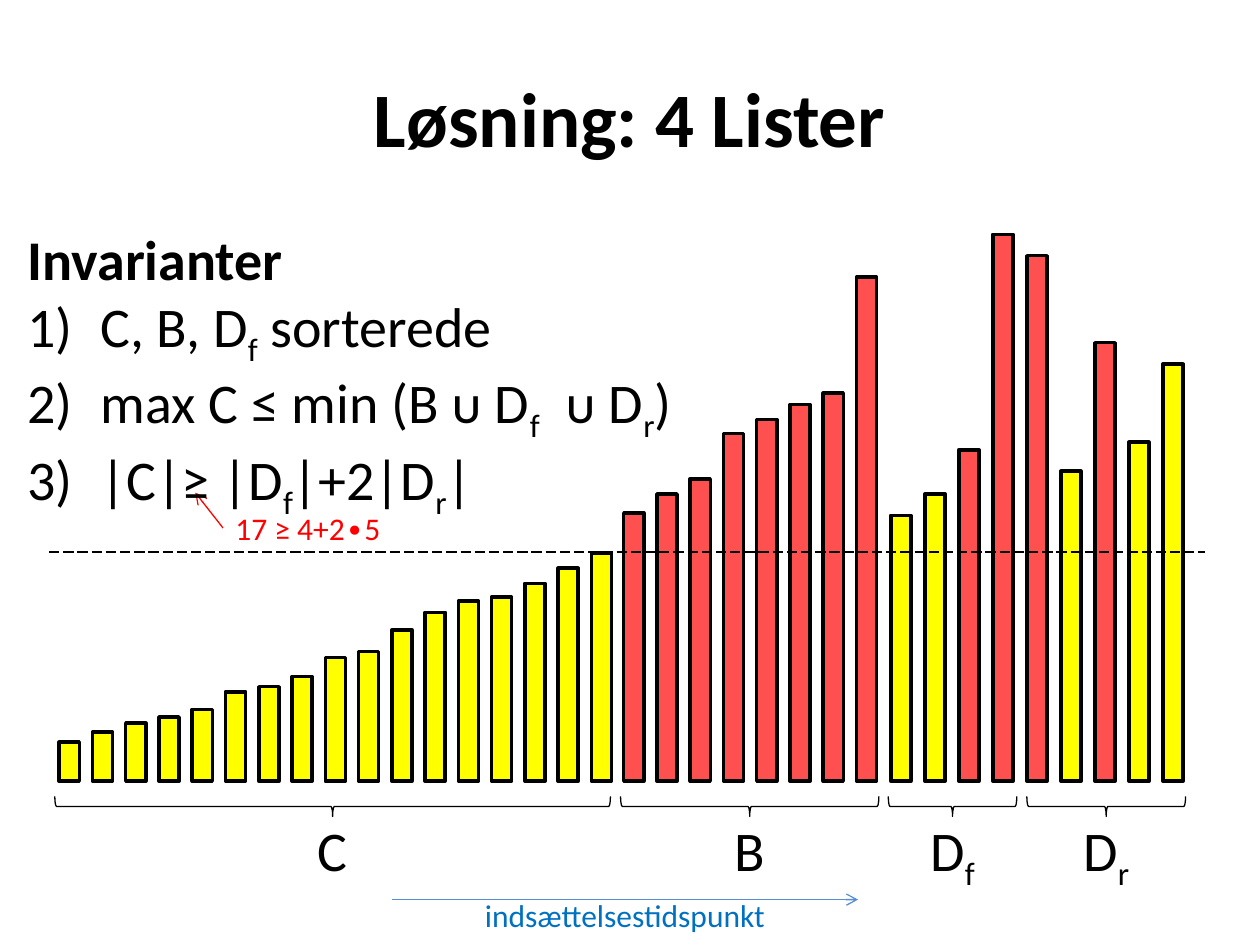
"""Builds a slide showing the four lists C, B, Df and Dr with their invariants."""
from dataclasses import dataclass

from lxml import etree
from pptx import Presentation
from pptx.dml.color import RGBColor
from pptx.enum.dml import MSO_LINE
from pptx.enum.shapes import MSO_CONNECTOR, MSO_SHAPE
from pptx.enum.text import MSO_ANCHOR, PP_ALIGN
from pptx.oxml.ns import qn
from pptx.slide import Slide
from pptx.util import Inches, Pt

RECTANGLE = MSO_SHAPE.RECTANGLE
LEFT_BRACE = MSO_SHAPE.LEFT_BRACE
STRAIGHT = MSO_CONNECTOR.STRAIGHT
LONG_DASH = MSO_LINE.LONG_DASH
LEFT = PP_ALIGN.LEFT
CENTER = PP_ALIGN.CENTER
TOP = MSO_ANCHOR.TOP
MIDDLE = MSO_ANCHOR.MIDDLE


@dataclass(frozen=True)
class Theme:
    """Colours, font and type sizes of the slide."""
    font: str = "Calibri"
    ink: RGBColor = RGBColor(0, 0, 0)
    yellow: RGBColor = RGBColor(0xFF, 0xFF, 0x00)
    red: RGBColor = RGBColor(0xFF, 0x50, 0x50)
    example: RGBColor = RGBColor(0xFF, 0x00, 0x00)
    arrow: RGBColor = RGBColor(0x55, 0x8E, 0xD5)
    time: RGBColor = RGBColor(0x00, 0x70, 0xC0)
    title_size: int = 44
    body_size: int = 32
    note_size: int = 18
    bar_line: float = 2
    thin_line: float = 0.75


THEME = Theme()
BASELINE = 6.2
BAR_WIDTH = 0.16
BRACE_MIDDLE = 6.4
BRACE_DEPTH = 0.16
LABEL_TOP = 6.42
LABEL_HEIGHT = 0.64


@dataclass(frozen=True)
class BarList:
    """A list of bars: heights, the indexes of its red bars, and its brace."""
    label: str
    left: float
    step: float
    heights: tuple[float, ...]
    red: tuple[int, ...]
    brace_center: float
    brace_length: float
    label_width: float


@dataclass(frozen=True)
class TextBlock:
    """Text at a place; parts between tildes are subscripts."""
    left: float
    top: float
    width: float
    height: float
    lines: tuple[str, ...]
    size: int
    color: RGBColor = THEME.ink
    align: PP_ALIGN = LEFT
    anchor: MSO_ANCHOR = TOP
    bold_heading: bool = False
    numbered: bool = False


@dataclass(frozen=True)
class Rule:
    """A straight line, dashed or with an arrowhead at its end."""
    start: tuple[float, float]
    end: tuple[float, float]
    color: RGBColor
    dashed: bool = False
    arrow: bool = False


BAR_LISTS = (
    BarList("C", 0.47, 0.264,
            (0.31, 0.39, 0.46, 0.51, 0.57, 0.71, 0.75, 0.83, 0.98, 1.03,
             1.2, 1.34, 1.43, 1.46, 1.57, 1.69, 1.81),
            (), 2.64, 4.41, 1.57),
    BarList("B", 4.95, 0.264, (2.13, 2.28, 2.4, 2.76, 2.87, 2.99, 3.08, 4.0),
            tuple(range(8)), 5.95, 2.05, 1.57),
    BarList("D~f~", 7.07, 0.27, (2.11, 2.28, 2.63, 4.34), (2, 3), 7.56, 1.02, 1.02),
    BarList("D~r~", 8.15, 0.27, (4.17, 2.46, 3.48, 2.69, 3.31), (0, 2), 8.78, 1.26, 1.02),
)

TEXT_BLOCKS = (
    TextBlock(0.12, 1.73, 5.35, 2.26,
              ("Invarianter", "C, B, D~f~ sorterede",
               "max C ≤ min (B ᴜ D~f~  ᴜ D~r~)", "|C|≥ |D~f~|+2|D~r~|"),
              THEME.body_size, bold_heading=True, numbered=True),
    TextBlock(1.77, 3.99, 2.68, 0.4, ("17 ≥ 4+2∙5",), THEME.note_size, THEME.example),
    TextBlock(0, 0.3, 10, 1.25, ("Løsning: 4 Lister",), THEME.title_size,
              align=CENTER, anchor=MIDDLE, bold_heading=True),
    TextBlock(3.74, 7.06, 2.44, 0.4, ("indsættelsestidspunkt",), THEME.note_size,
              THEME.time, CENTER),
)

RULES = (
    Rule((0.39, 4.38), (9.56, 4.38), THEME.ink, dashed=True),
    Rule((1.77, 4.19), (1.55, 3.91), THEME.example, arrow=True),
    Rule((3.11, 7.14), (6.81, 7.14), THEME.arrow, arrow=True),
)


def draw_text(page: Slide, block: TextBlock) -> None:
    """Draw a text block, with numbers after its heading if asked for."""
    box = page.shapes.add_textbox(Inches(block.left), Inches(block.top),
                                  Inches(block.width), Inches(block.height))
    frame = box.text_frame
    frame.word_wrap = True
    frame.vertical_anchor = block.anchor
    for index, line in enumerate(block.lines):
        para = frame.paragraphs[0] if index == 0 else frame.add_paragraph()
        para.alignment = block.align
        para.font.name = THEME.font
        para.font.size = Pt(block.size)
        para.font.color.rgb = block.color
        para.font.bold = block.bold_heading and index == 0
        if block.numbered and index > 0:
            number_paragraph(para)
        for position, part in enumerate(line.split("~")):
            if part:
                span = para.add_run()
                span.text = part
                if position % 2:
                    span.font._element.set("baseline", "-25000")


def number_paragraph(para) -> None:
    """Give a paragraph a hanging automatic number."""
    properties = para._p.get_or_add_pPr()
    properties.set("marL", str(Inches(0.58)))
    properties.set("indent", str(Inches(-0.58)))
    number = etree.Element(qn("a:buAutoNum"), type="arabicParenR")
    properties.find(qn("a:defRPr")).addprevious(number)


def draw_bar_list(page: Slide, bars: BarList) -> None:
    """Draw the bars of a list with a brace and label below."""
    for index, height in enumerate(bars.heights):
        bar = page.shapes.add_shape(
            RECTANGLE, Inches(bars.left + index * bars.step),
            Inches(BASELINE - height), Inches(BAR_WIDTH), Inches(height))
        bar.shadow.inherit = False
        bar.fill.solid()
        bar.fill.fore_color.rgb = THEME.red if index in bars.red else THEME.yellow
        bar.line.color.rgb = THEME.ink
        bar.line.width = Pt(THEME.bar_line)
    brace = page.shapes.add_shape(
        LEFT_BRACE, Inches(bars.brace_center - BRACE_DEPTH / 2),
        Inches(BRACE_MIDDLE - bars.brace_length / 2),
        Inches(BRACE_DEPTH), Inches(bars.brace_length))
    brace.rotation = 270
    brace.shadow.inherit = False
    brace.fill.background()
    brace.line.color.rgb = THEME.ink
    brace.line.width = Pt(THEME.thin_line)
    draw_text(page, TextBlock(bars.brace_center - bars.label_width / 2, LABEL_TOP,
                              bars.label_width, LABEL_HEIGHT, (bars.label,),
                              THEME.body_size, align=CENTER))


def draw_rule(page: Slide, rule: Rule) -> None:
    """Draw a straight line."""
    line = page.shapes.add_connector(STRAIGHT, *map(Inches, rule.start + rule.end))
    line.line.color.rgb = rule.color
    line.line.width = Pt(THEME.thin_line)
    if rule.dashed:
        line.line.dash_style = LONG_DASH
    properties = line._element.spPr
    if rule.arrow:
        etree.SubElement(properties.find(qn("a:ln")), qn("a:tailEnd"), type="arrow")
    etree.SubElement(properties, qn("a:effectLst"))


def main() -> None:
    """Build and save the deck."""
    deck = Presentation()
    deck.slide_width, deck.slide_height = Inches(10), Inches(7.5)
    page = deck.slides.add_slide(deck.slide_layouts[6])
    for bars in BAR_LISTS:
        draw_bar_list(page, bars)
    for rule in RULES:
        draw_rule(page, rule)
    for block in TEXT_BLOCKS:
        draw_text(page, block)
    deck.save("out.pptx")


if __name__ == "__main__":
    main()
